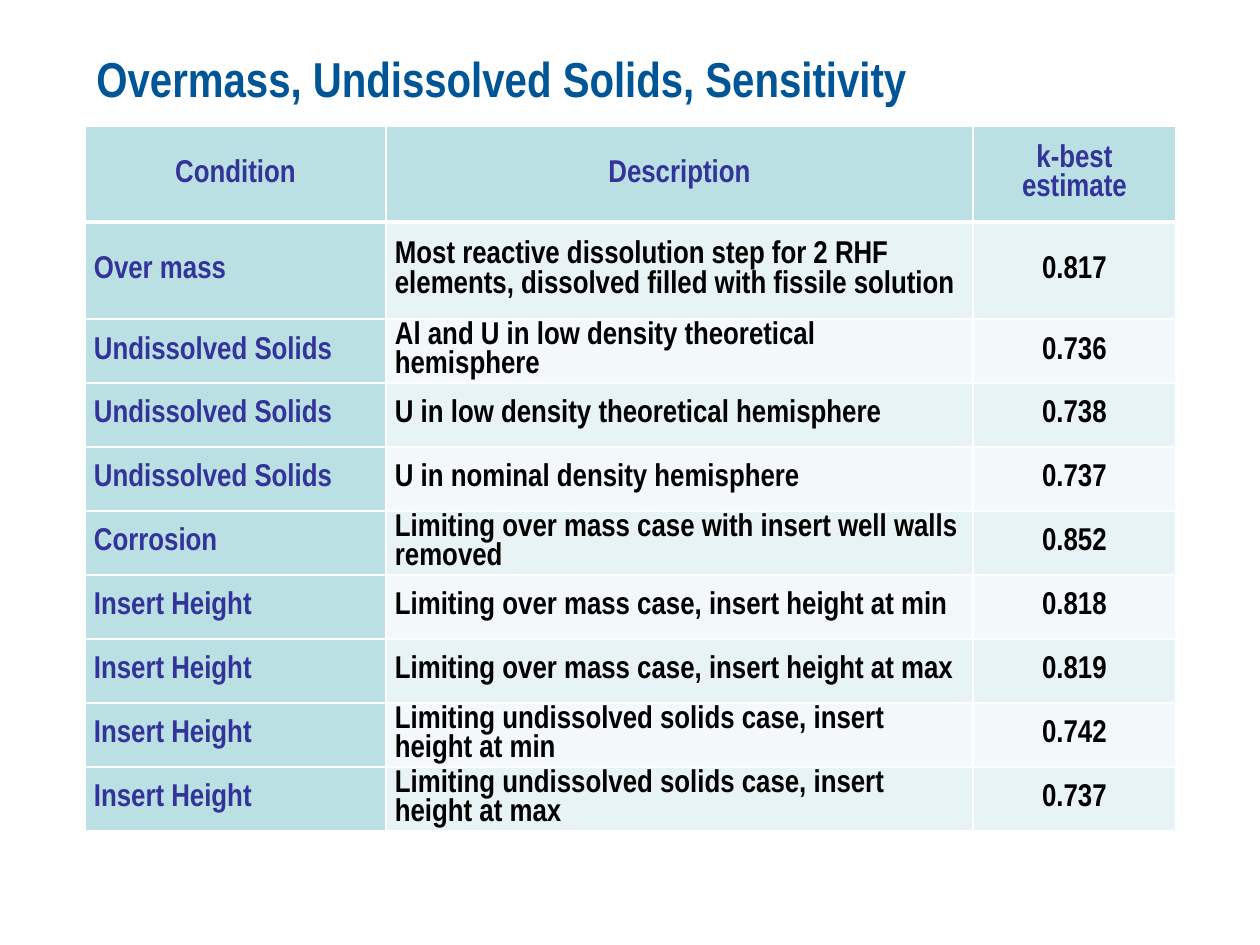
from lxml import etree
from pptx import Presentation
from pptx.dml.color import RGBColor
from pptx.enum.text import MSO_ANCHOR, PP_ALIGN
from pptx.oxml.ns import qn
from pptx.util import Pt

MIDDLE = MSO_ANCHOR.MIDDLE
LEFT, CENTER = PP_ALIGN.LEFT, PP_ALIGN.CENTER
PX = 914400 / 126
LINE_HEIGHT = 0.94

TITLE = "Overmass, Undissolved Solids, Sensitivity"
HEADER = ("Condition", "Description", "k-best estimate")
CASES = [
    ("Over mass", "Most reactive dissolution step for 2 RHF elements, dissolved filled with fissile solution", "0.817"),
    ("Undissolved Solids", "Al and U in low density theoretical hemisphere", "0.736"),
    ("Undissolved Solids", "U in low density theoretical hemisphere", "0.738"),
    ("Undissolved Solids", "U in nominal density hemisphere", "0.737"),
    ("Corrosion", "Limiting over mass case with insert well walls removed", "0.852"),
    ("Insert Height", "Limiting over mass case, insert height at min", "0.818"),
    ("Insert Height", "Limiting over mass case, insert height at max", "0.819"),
    ("Insert Height", "Limiting undissolved solids case, insert height at min", "0.742"),
    ("Insert Height", "Limiting undissolved solids case, insert height at max", "0.737"),
]
COLUMN_WIDTHS = [301, 587, 203]
ROW_HEIGHTS = [96, 97] + [64] * 8
TITLE_BLUE, LABEL_BLUE, BLACK, WHITE = "005596", "333399", "000000", "FFFFFF"
LABEL_FILL = "BBE0E3"
BAND_FILLS = ("F3F9FA", "E7F3F4")
CELL_FORMAT = {"margin_left": 9, "margin_right": 9, "margin_top": 0, "margin_bottom": 0}


def px(length):
    return round(length * PX)


def color(value):
    return RGBColor.from_string(value)


def write(frame, text, size, ink, align):
    para = frame.paragraphs[0]
    para.alignment = align
    para.line_spacing = Pt(round(size * LINE_HEIGHT, 1))
    span = para.add_run()
    span.text = text
    font_format = {"name": "Arial Narrow", "size": Pt(size), "bold": True}
    for name, value in font_format.items():
        setattr(span.font, name, value)
    span.font.color.rgb = color(ink)


def add_borders(cell, widths):
    properties = cell._tc.get_or_add_tcPr()
    for side, width in widths.items():
        line = etree.SubElement(properties, qn("a:ln" + side), w=str(Pt(width)))
        fill = etree.SubElement(line, qn("a:solidFill"))
        etree.SubElement(fill, qn("a:srgbClr"), val=WHITE)


def add_title(page):
    box = page.shapes.add_textbox(px(84), px(42), px(1113), px(84))
    box.text_frame.word_wrap = True
    box.text_frame.vertical_anchor = MIDDLE
    write(box.text_frame, TITLE, 28, TITLE_BLUE, LEFT)


def add_case_table(page):
    rows = [HEADER] + CASES
    table = page.shapes.add_table(
        len(rows), len(HEADER), px(85), px(126), px(sum(COLUMN_WIDTHS)), px(sum(ROW_HEIGHTS))
    ).table
    for column, width in zip(table.columns, COLUMN_WIDTHS):
        column.width = px(width)
    for row, height in zip(table.rows, ROW_HEIGHTS):
        row.height = px(height)
    for r, texts in enumerate(rows):
        for c, text in enumerate(texts):
            cell = table.cell(r, c)
            is_label = r == 0 or c == 0
            for name, value in CELL_FORMAT.items():
                setattr(cell, name, px(value))
            cell.vertical_anchor = MIDDLE
            add_borders(cell, {"L": 1, "R": 1, "T": 3 if r == 1 else 1, "B": 3 if r == 0 else 1})
            cell.fill.solid()
            cell.fill.fore_color.rgb = color(LABEL_FILL if is_label else BAND_FILLS[r % 2])
            align = CENTER if r == 0 or c == 2 else LEFT
            write(cell.text_frame, text, 18, LABEL_BLUE if is_label else BLACK, align)


def main():
    deck = Presentation()
    deck.slide_width, deck.slide_height = px(1260), px(945)
    page = deck.slides.add_slide(deck.slide_layouts[6])
    add_title(page)
    add_case_table(page)
    deck.save("out.pptx")


if __name__ == "__main__":
    main()
